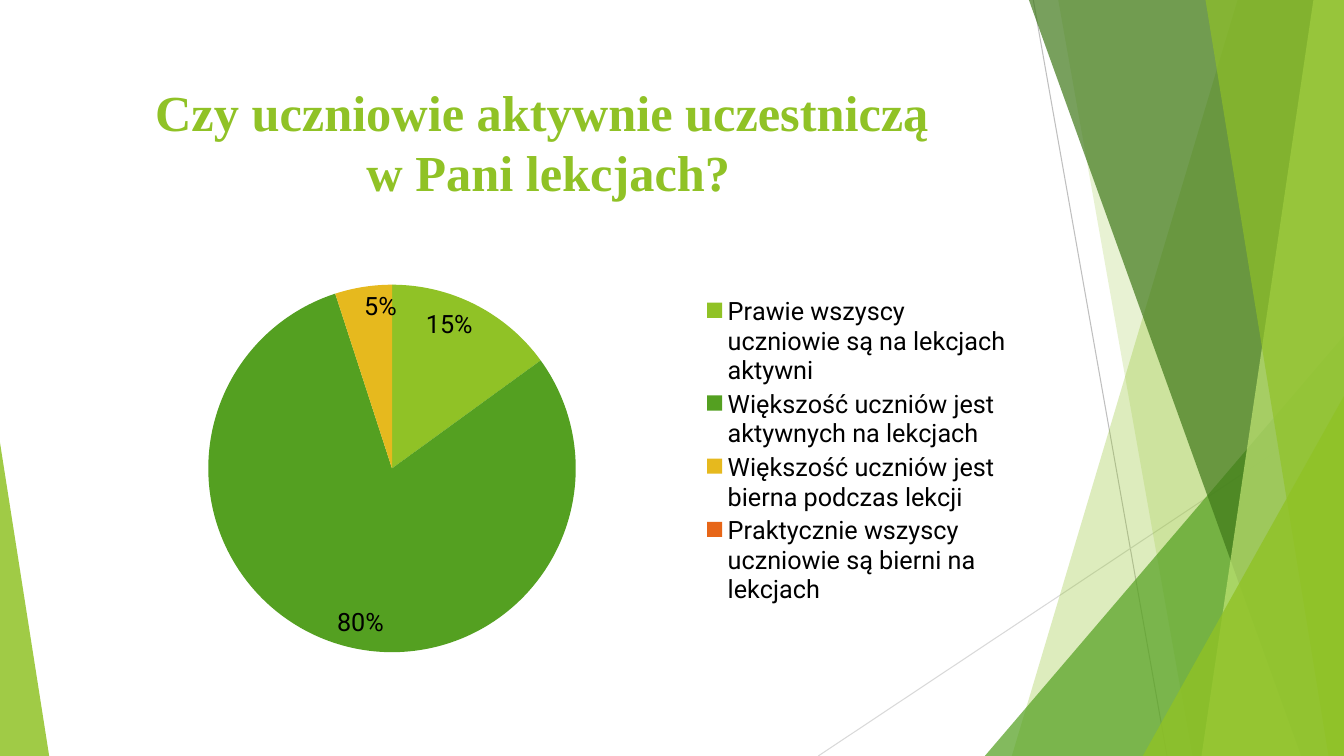
from collections import namedtuple

from lxml.etree import SubElement
from pptx import Presentation
from pptx.chart.data import CategoryChartData
from pptx.dml.color import RGBColor
from pptx.enum.chart import XL_CHART_TYPE as ChartType
from pptx.enum.chart import XL_LABEL_POSITION as LabelPosition
from pptx.enum.chart import XL_LEGEND_POSITION as LegendPosition
from pptx.enum.shapes import MSO_CONNECTOR as Connector
from pptx.enum.shapes import MSO_SHAPE as Shape
from pptx.enum.text import MSO_ANCHOR as Anchor
from pptx.enum.text import PP_ALIGN as Align
from pptx.oxml import parse_xml
from pptx.oxml.ns import nsdecls, qn
from pptx.util import Cm, Pt

LIME = RGBColor(0x90, 0xC2, 0x26)
GREEN = RGBColor(0x54, 0xA0, 0x21)
FOREST = RGBColor(0x3F, 0x78, 0x19)
PALE_LIME = RGBColor(0xC0, 0xE4, 0x74)
GOLD = RGBColor(0xE6, 0xB9, 0x1E)
ORANGE = RGBColor(0xE7, 0x66, 0x18)
BLACK = RGBColor(0, 0, 0)
GREY = RGBColor(0xBF, 0xBF, 0xBF)
LIGHT_GREY = RGBColor(0xD9, 0xD9, 0xD9)

Box = namedtuple("Box", "left top width height")
PAGE = Box(Cm(0), Cm(0), Cm(33.87), Cm(19.05))
TITLE = Box(Cm(1.88), Cm(1.73), Cm(23.88), Cm(3.66))
CHART = Box(Cm(1.88), Cm(5.99), Cm(23.88), Cm(10.77))

ANSWERS = [
    ("Prawie wszyscy uczniowie są na lekcjach aktywni", 15, LIME),
    ("Większość uczniów jest aktywnych na lekcjach", 80, GREEN),
    ("Większość uczniów jest bierna podczas lekcji", 5, GOLD),
    ("Praktycznie wszyscy uczniowie są bierni na lekcjach", 0, ORANGE),
]


def paint(shape, color, opacity):
    """Give a shape a see-through fill, with opacity in percent."""
    shape.shadow.inherit = False
    shape.line.fill.background()
    shape.fill.solid()
    shape.fill.fore_color.rgb = color
    fill_color = shape.fill._xPr.find(qn("a:solidFill"))[0]
    SubElement(fill_color, qn("a:alpha"), val=str(opacity * 1000))


def add_line(page, start, end, color):
    line = page.shapes.add_connector(Connector.STRAIGHT, *start, *end)
    line.line.color.rgb = color
    line.line.width = Pt(0.75)
    SubElement(line._element.spPr, qn("a:effectLst"))


def add_band(page, box, top_reach, bottom_reach, color, opacity):
    """Fill from a slanted edge to the right side; reaches are in cm from that side."""
    right, bottom = box.left + box.width, box.top + box.height
    builder = page.shapes.build_freeform(right - Cm(top_reach), box.top)
    builder.add_line_segments(
        [(right, box.top), (right, bottom), (right - Cm(bottom_reach), bottom)])
    paint(builder.convert_to_shape(), color, opacity)


def add_corner(page, box, width, height, color, opacity, at_right=True):
    """Put a right-angled triangle in a bottom corner of the box."""
    left = box.left + (box.width - Cm(width) if at_right else 0)
    top = box.top + box.height - Cm(height)
    corner = page.shapes.add_shape(
        Shape.ISOSCELES_TRIANGLE, left, top, Cm(width), Cm(height))
    corner.adjustments[0] = 1 if at_right else 0
    paint(corner, color, opacity)


def add_decoration(page, box):
    right, bottom = box.left + box.width, box.top + box.height
    add_line(page, (right - Cm(7.83), box.top), (right - Cm(4.46), bottom), GREY)
    add_line(page, (right, box.top + Cm(10.24)), (right - Cm(13.25), bottom), LIGHT_GREY)
    add_band(page, box, 2.68, 8.37, LIME, 30)
    add_band(page, box, 7.2, 3.82, LIME, 20)
    add_corner(page, box, 9.05, 10.59, GREEN, 72)
    add_band(page, box, 7.94, 1.08, FOREST, 70)
    add_band(page, box, 0.77, 3.59, PALE_LIME, 70)
    add_band(page, box, 3.49, 0.39, LIME, 65)
    add_corner(page, box, 5.07, 9.07, LIME, 80)
    add_corner(page, box, 1.24, 7.9, LIME, 85, at_right=False)


def fill_title(page, box):
    title = page.shapes.title
    title.left, title.top, title.width, title.height = box
    frame = title.text_frame
    frame.text = "Czy uczniowie aktywnie uczestniczą \vw Pani lekcjach?"
    frame.word_wrap = True
    frame.vertical_anchor = Anchor.MIDDLE
    para = frame.paragraphs[0]
    para.alignment = Align.CENTER
    for span in para.runs:
        span.font.name = "Times New Roman"
        span.font.size = Pt(36)
        span.font.bold = True
        span.font.color.rgb = LIME


def make_layout(x, y, w, h, inner=False):
    """Return a manual layout, in fractions of the chart."""
    target = '<c:layoutTarget val="inner"/>' if inner else ""
    return parse_xml(
        f'<c:layout {nsdecls("c")}><c:manualLayout>{target}'
        '<c:xMode val="edge"/><c:yMode val="edge"/>'
        f'<c:x val="{x}"/><c:y val="{y}"/><c:w val="{w}"/><c:h val="{h}"/>'
        '</c:manualLayout></c:layout>')


def place(element, layout, before):
    """Swap the layout of a chart part, keeping it ahead of the named child."""
    for old in element.findall(qn("c:layout")):
        element.remove(old)
    element.find(qn(before)).addprevious(layout)


def add_answer_chart(page, box):
    data = CategoryChartData()
    data.categories = [answer for answer, _, _ in ANSWERS]
    data.add_series("Series 1", [share for _, share, _ in ANSWERS])
    chart = page.shapes.add_chart(ChartType.PIE, *box, data).chart
    chart.has_title = False
    chart.font.name = "Roboto"
    chart.font.size = Pt(18)
    chart.font.color.rgb = BLACK

    chart.has_legend = True
    chart.legend.position = LegendPosition.RIGHT
    chart.legend.include_in_layout = False
    place(chart.legend._element, make_layout(0.66, 0.13, 0.33, 0.74), "c:overlay")

    plot = chart.plots[0]
    plot.vary_by_categories = True
    place(plot._element.getparent(),
          make_layout(0.14, 0.11, 0.39, 0.86, inner=True), "c:pieChart")
    series = plot.series[0]
    labels = series.data_labels
    labels.show_percentage = True
    labels.show_value = False
    labels.number_format = "0%"
    labels.number_format_is_linked = False
    labels.position = LabelPosition.INSIDE_END
    for index, (_, share, color) in enumerate(ANSWERS):
        fill = series.points[index].format.fill
        fill.solid()
        fill.fore_color.rgb = color
        if not share:
            labels._element.insert(0, parse_xml(
                f'<c:dLbl {nsdecls("c")}><c:idx val="{index}"/>'
                '<c:delete val="1"/></c:dLbl>'))


def main():
    deck = Presentation()
    deck.slide_width, deck.slide_height = PAGE.width, PAGE.height
    page = deck.slides.add_slide(deck.slide_layouts[5])
    add_decoration(page, PAGE)
    fill_title(page, TITLE)
    add_answer_chart(page, CHART)
    deck.save("out.pptx")


if __name__ == "__main__":
    main()
